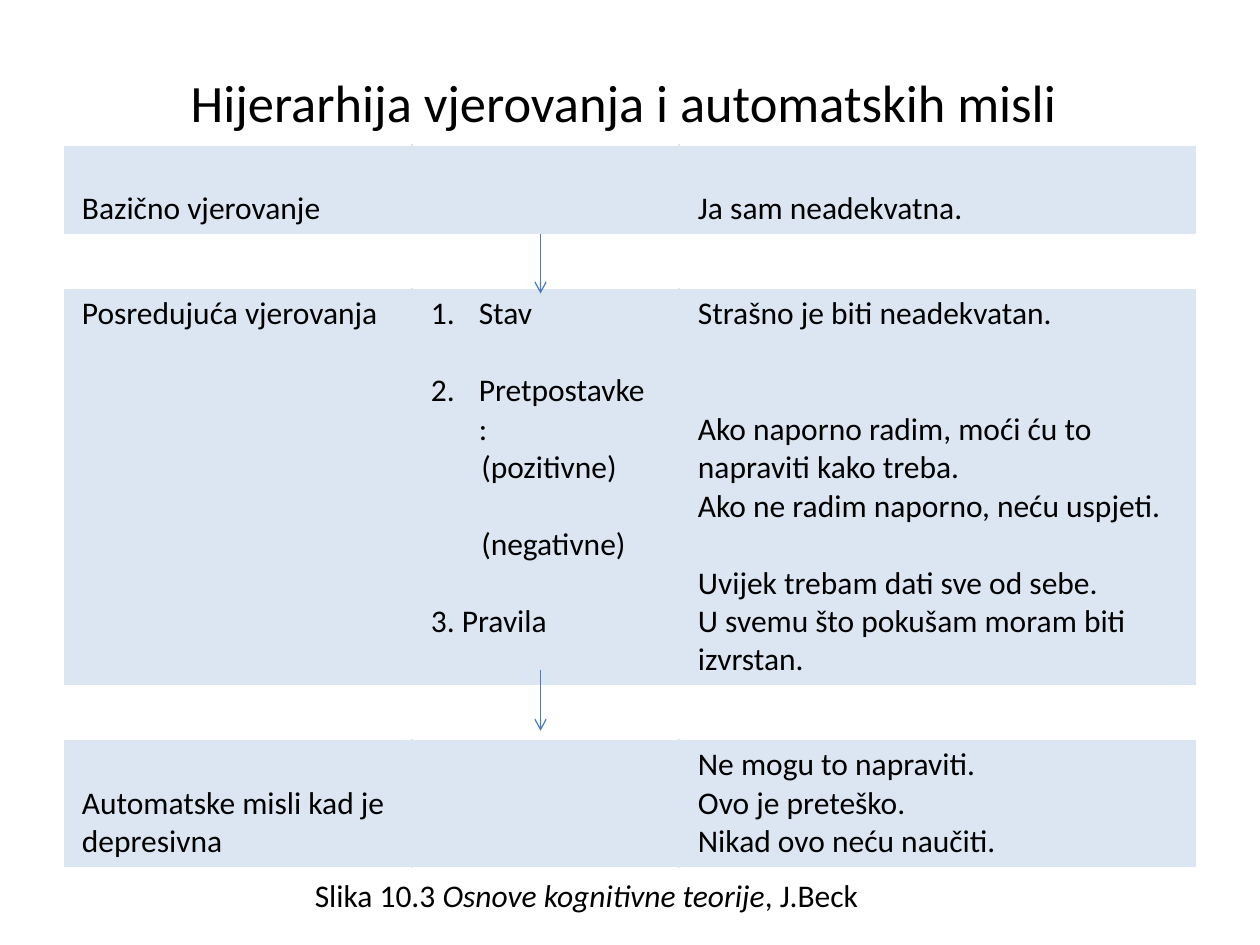
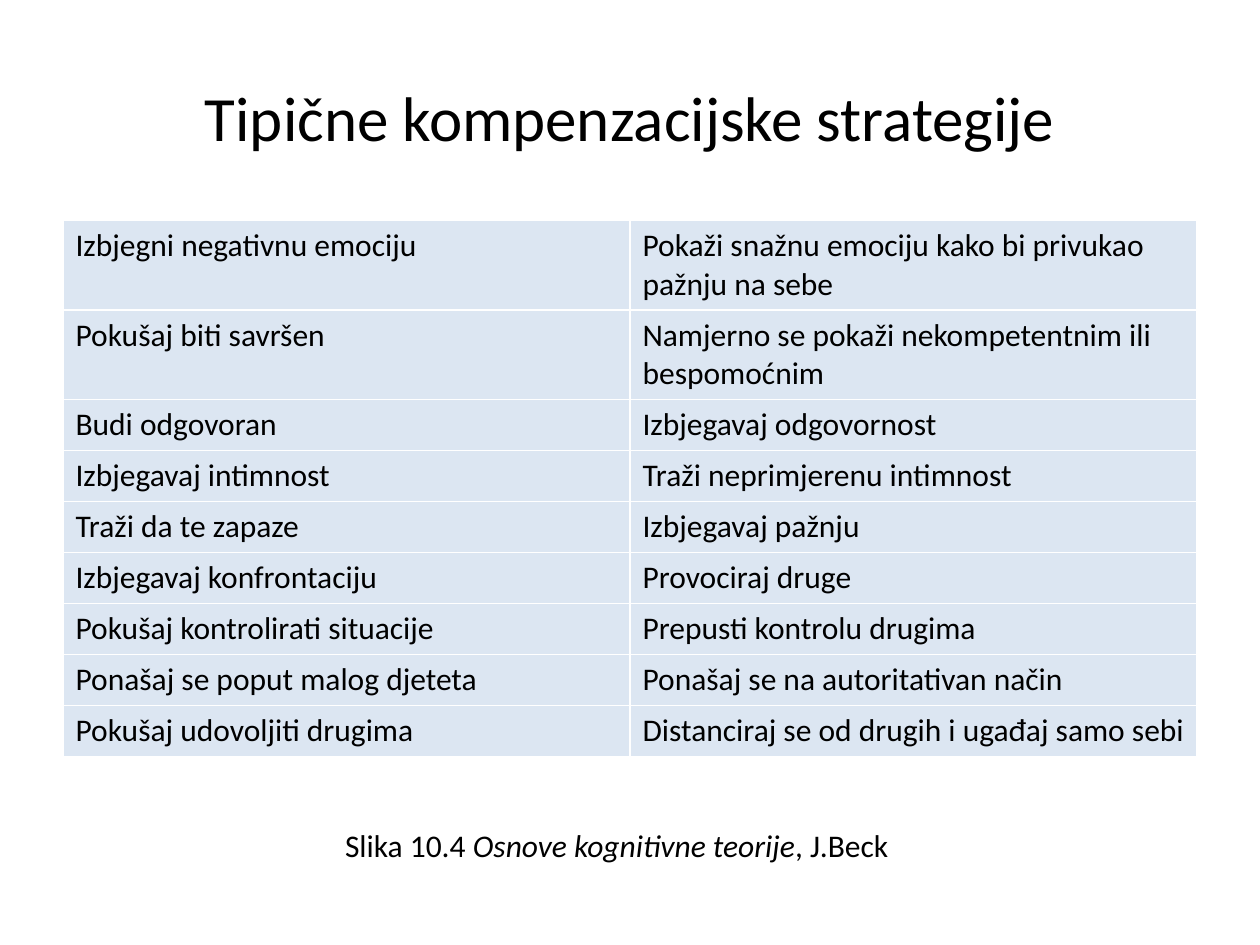
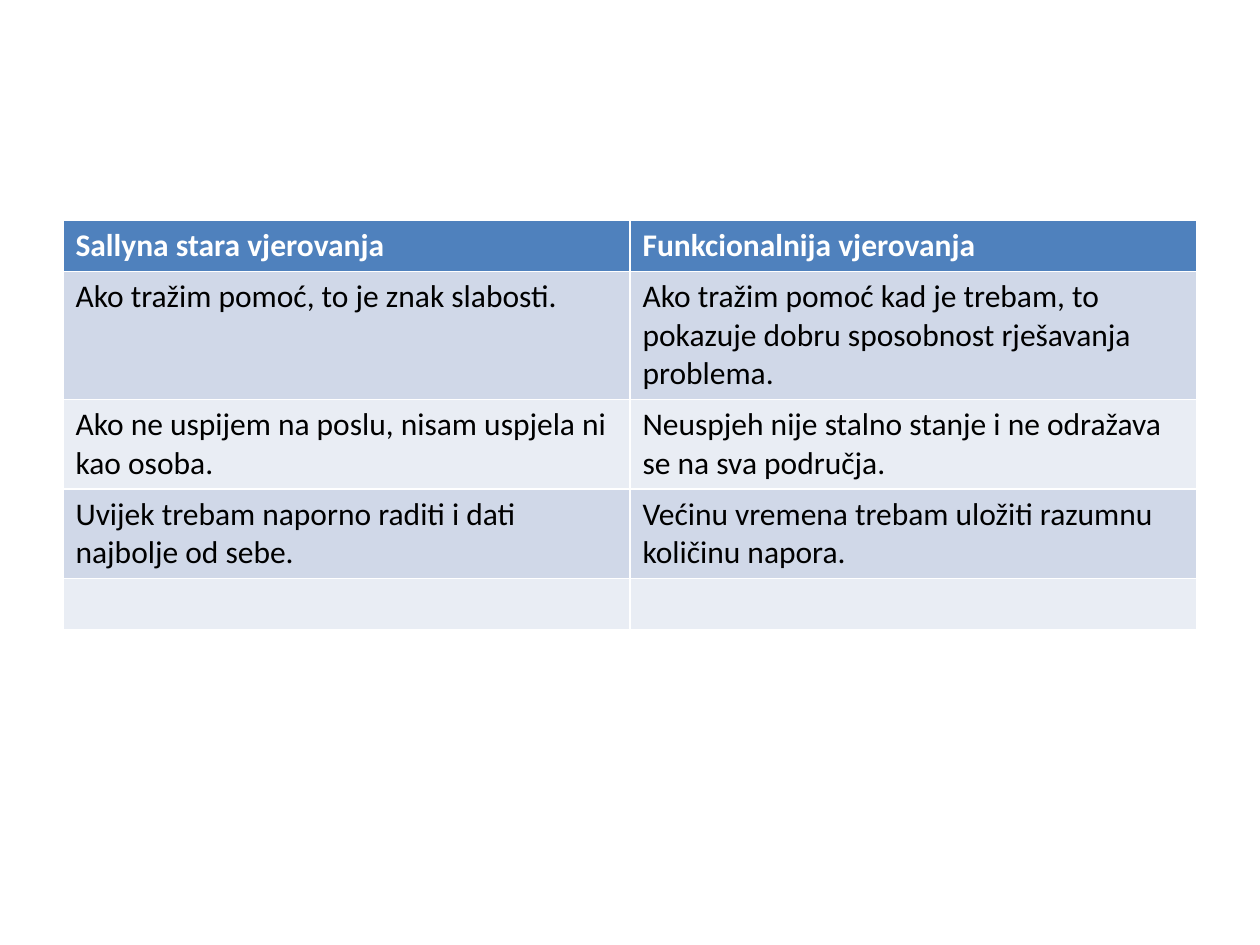
from lxml.etree import SubElement
from pptx import Presentation
from pptx.dml.color import RGBColor
from pptx.enum.shapes import MSO_CONNECTOR as CONN
from pptx.enum.text import MSO_ANCHOR as ANCHOR, PP_ALIGN as ALIGN
from pptx.oxml.ns import qn
from pptx.util import Emu, Inches, Pt

# Shared style
FONT, SIZE = "Calibri", 18
BLACK, WHITE, PALE, ARROW = "000000", "FFFFFF", "DCE6F2", "4B7EBC"
HEADER, BANDS = "4F81BD", ("D0D8E8", "E9EDF4")
LINE, PAD = 0.305, 0.1  # height of a text line, cell padding
MARGIN, TABLE_W, TABLE_TOP = 0.5, 9, 1.75

# Hierarchy of beliefs: a paragraph is text or (text, format)
HIERARCHY_TITLE = "Hijerarhija vjerovanja i automatskih misli"
HIERARCHY_COLS = (2.77, 2.12, 4.11)
GAP = dict(before=22)
NESTED = dict(margin=0.4)
HIERARCHY = [
    (2, [["Bazično vjerovanje"], [], ["Ja sam neadekvatna."]]),
    None,
    (10, [
        ["Posredujuća vjerovanja"],
        [("Stav", dict(number=1)),
         ("Pretpostavke :", dict(number=2, **GAP)),
         ("(pozitivne)", NESTED),
         ("(negativne)", dict(**NESTED, **GAP)),
         ("3. Pravila", GAP)],
        ["Strašno je biti neadekvatan.",
         ("Ako naporno radim, moći ću to napraviti kako treba.", dict(before=44)),
         "Ako ne radim naporno, neću uspjeti.",
         ("Uvijek trebam dati sve od sebe.", GAP),
         "U svemu što pokušam moram biti izvrstan."]]),
    None,
    (3, [["Automatske misli kad je depresivna"], [],
         ["Ne mogu to napraviti.", "Ovo je preteško.", "Nikad ovo neću naučiti."]]),
]
ARROWS = [(1.86, 2.33), (5.32, 5.8)]
ARROW_X = 4.29

# Two-column tables: lines in the row, left cell, right cell
STRATEGIES_TITLE = "Tipične kompenzacijske strategije"
STRATEGIES = [
    (2, "Izbjegni negativnu emociju", "Pokaži snažnu emociju kako bi privukao pažnju na sebe"),
    (2, "Pokušaj biti savršen", "Namjerno se pokaži nekompetentnim ili bespomoćnim"),
    (1, "Budi odgovoran", "Izbjegavaj odgovornost"),
    (1, "Izbjegavaj intimnost", "Traži neprimjerenu intimnost"),
    (1, "Traži da te zapaze", "Izbjegavaj pažnju"),
    (1, "Izbjegavaj konfrontaciju", "Provociraj druge"),
    (1, "Pokušaj kontrolirati situacije", "Prepusti kontrolu drugima"),
    (1, "Ponašaj se poput malog djeteta", "Ponašaj se na autoritativan način"),
    (1, "Pokušaj udovoljiti drugima", "Distanciraj se od drugih i ugađaj samo sebi"),
]
BELIEFS = [
    (1, "Sallyna stara vjerovanja", "Funkcionalnija vjerovanja"),
    (3, "Ako tražim pomoć, to je znak slabosti.",
     "Ako tražim pomoć kad je trebam, to pokazuje dobru sposobnost rješavanja problema."),
    (2, "Ako ne uspijem na poslu, nisam uspjela ni kao osoba.",
     "Neuspjeh nije stalno stanje i ne odražava se na sva područja."),
    (2, "Uvijek trebam naporno raditi i dati najbolje od sebe.",
     "Većinu vremena trebam uložiti razumnu količinu napora."),
    (1, "", ""),
]


def rgb(color):
    return RGBColor.from_string(color)


def add_text(p, text, size=SIZE, color=BLACK, bold=False, italic=False,
             before=0, margin=0, number=None):
    """Add a run to a paragraph and set the paragraph's list format."""
    pPr = p._p.get_or_add_pPr()
    if number:
        margin = 0.38
        pPr.set("indent", str(-Inches(margin)))
        SubElement(pPr, qn("a:buAutoNum"), type="arabicPeriod", startAt=str(number))
    if margin:
        pPr.set("marL", str(Inches(margin)))
    if before:
        p.space_before = Pt(before)
    r = p.add_run()
    r.text = text
    f = r.font
    f.name, f.size, f.bold, f.italic = FONT, Pt(size), bold, italic
    f.color.rgb = rgb(color)


def add_box(s, x, y, w, h, wrap=True):
    tf = s.shapes.add_textbox(Inches(x), Inches(y), Inches(w), Inches(h)).text_frame
    tf.word_wrap = wrap
    return tf


def add_title(s, text, size, x, h):
    tf = add_box(s, x, 0.3, TABLE_W, h)
    tf.vertical_anchor = ANCHOR.MIDDLE
    tf.paragraphs[0].alignment = ALIGN.CENTER
    add_text(tf.paragraphs[0], text, size=size)


def add_caption(s, number, x, y):
    p = add_box(s, x, y, 4.56, 0.4, wrap=False).paragraphs[0]
    add_text(p, f"Slika {number} ")
    add_text(p, "Osnove kognitivne teorije", italic=True)
    add_text(p, ", J.Beck")


def add_grid(s, y, cols, heights, header=False):
    tbl = s.shapes.add_table(len(heights), len(cols), Inches(MARGIN), Inches(y),
                             Inches(sum(cols)), Inches(sum(heights))).table
    tbl.first_row, tbl.horz_banding = header, False
    for col, w in zip(tbl.columns, cols):
        col.width = Inches(w)
    for row, h in zip(tbl.rows, heights):
        row.height = Inches(h)
    return tbl


def fill_cell(cell, color):
    cell.fill.solid()
    cell.fill.fore_color.rgb = rgb(color)


def border(cell, **sides):
    """Colour the named sides (L, R, T, B) of a cell, ahead of its fill."""
    tcPr = cell._tc.get_or_add_tcPr()
    for i, (side, color) in enumerate(sides.items()):
        ln = SubElement(tcPr, qn(f"a:ln{side}"), w=str(Pt(1)))
        SubElement(SubElement(ln, qn("a:solidFill")), qn("a:srgbClr"), val=color)
        tcPr.insert(i, ln)


def row_height(lines):
    return lines * LINE + PAD


def add_pairs(s, rows, fills, header=False):
    """Draw a table of two equal columns."""
    tbl = add_grid(s, TABLE_TOP, [TABLE_W / 2] * 2,
                   [row_height(lines) for lines, *_ in rows], header)
    for i, (_, *texts) in enumerate(rows):
        top = header and i == 0
        for j, text in enumerate(texts):
            cell = tbl.cell(i, j)
            fill_cell(cell, fills[i])
            if text:
                add_text(cell.text_frame.paragraphs[0], text, bold=top,
                         color=WHITE if top else BLACK)


def add_hierarchy(s):
    heights = [row_height(row[0]) if row else 0.43 for row in HIERARCHY]
    tbl = add_grid(s, 1.15, HIERARCHY_COLS, heights)
    last = len(HIERARCHY_COLS) - 1
    for i, row in enumerate(HIERARCHY):
        for j in range(last + 1):
            cell = tbl.cell(i, j)
            fill_cell(cell, PALE if row else WHITE)
            if not row:
                continue
            border(cell, L=PALE if j else WHITE, R=PALE if j < last else WHITE,
                   T=WHITE, B=WHITE)
            cell.margin_left = cell.margin_right = Inches(0.15)
            cell.vertical_anchor = ANCHOR.TOP if i == 2 else ANCHOR.BOTTOM
            tf = cell.text_frame
            for k, item in enumerate(row[1][j]):
                text, fmt = (item, {}) if isinstance(item, str) else item
                add_text(tf.add_paragraph() if k else tf.paragraphs[0], text, **fmt)


def add_arrow(s, x, y1, y2):
    c = s.shapes.add_connector(CONN.STRAIGHT, Inches(x), Inches(y1), Inches(x), Inches(y2))
    c.line.color.rgb, c.line.width = rgb(ARROW), Pt(0.75)
    SubElement(c.line._get_or_add_ln(), qn("a:tailEnd"), type="arrow")
    SubElement(c._element.spPr, qn("a:effectLst"))


def main():
    prs = Presentation()
    prs.slide_width, prs.slide_height = Inches(10), Inches(7.5)
    hierarchy, strategies, beliefs = (
        prs.slides.add_slide(prs.slide_layouts[6]) for _ in range(3))

    # Hierarchy of beliefs
    add_title(hierarchy, HIERARCHY_TITLE, 30, 0.45, 1.01)
    add_hierarchy(hierarchy)
    for y1, y2 in ARROWS:
        add_arrow(hierarchy, ARROW_X, y1, y2)
    add_caption(hierarchy, "10.3", 2.4, 6.9)

    # Compensation strategies
    add_title(strategies, STRATEGIES_TITLE, 36, MARGIN, 1.25)
    add_pairs(strategies, STRATEGIES, [PALE] * len(STRATEGIES))
    add_caption(strategies, "10.4", 2.64, 6.51)

    # Old and new beliefs
    add_pairs(beliefs, BELIEFS, [HEADER, *BANDS * 2], header=True)

    prs.save("out.pptx")


if __name__ == "__main__":
    main()
